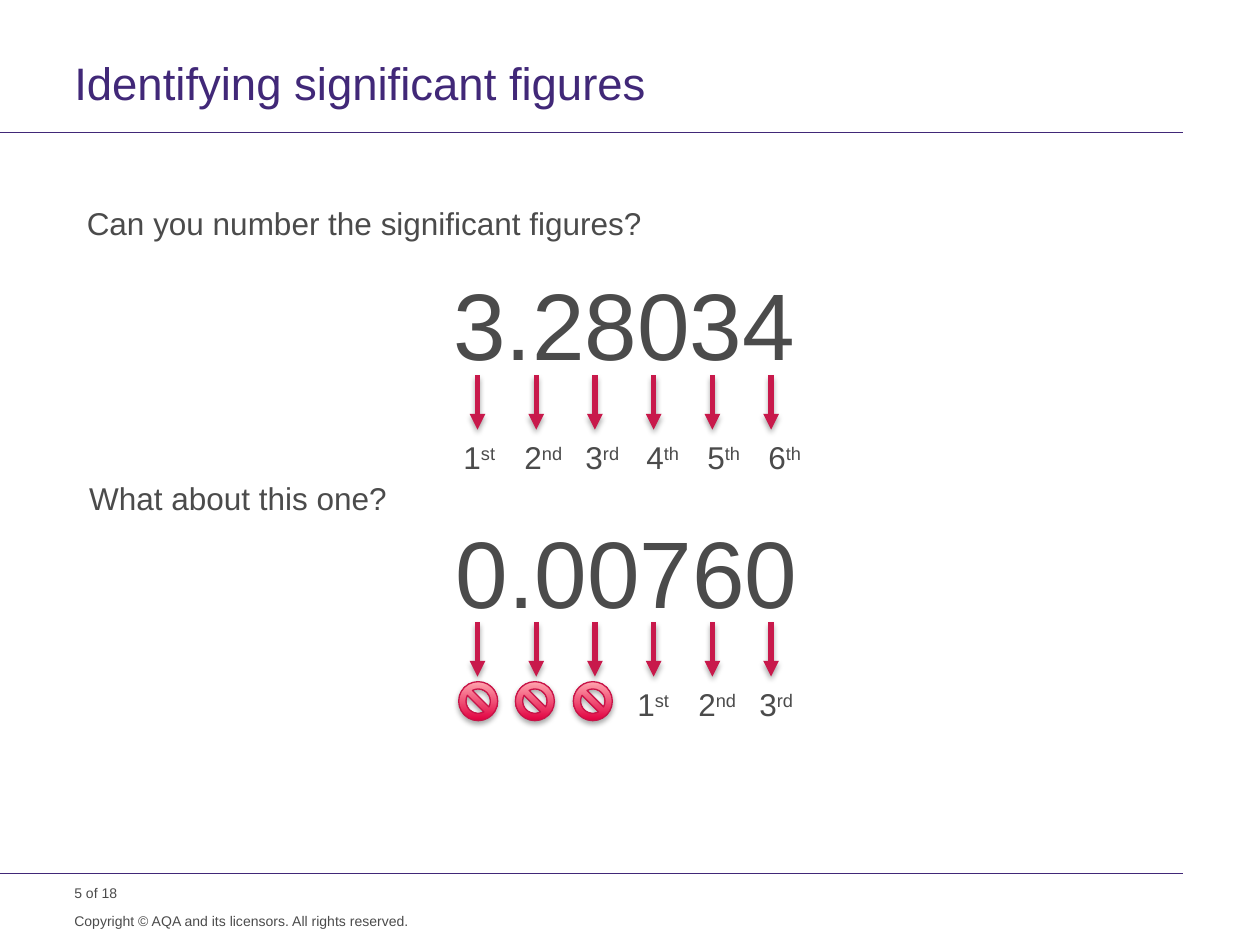
from lxml import etree
from pptx import Presentation
from pptx import util as u
from pptx.dml.color import RGBColor
from pptx.enum import shapes, text
from pptx.oxml import ns

PURPLE = RGBColor(0x41, 0x28, 0x78)
GREY = RGBColor(0x4B, 0x4B, 0x4B)
CRIMSON = RGBColor(0xC8, 0x19, 0x4B)
SIGN_EDGE = RGBColor(0xC8, 0x14, 0x48)
SIGN_DARK = RGBColor(0xE1, 0x00, 0x40)
SIGN_LIGHT = RGBColor(0xFF, 0xA4, 0xAE)

SHADOW = (
    f'<a:effectLst {ns.nsdecls("a")}>'
    '<a:outerShdw blurRad="40000" dist="23000" dir="5400000" rotWithShape="0">'
    '<a:srgbClr val="000000"><a:alpha val="35000"/></a:srgbClr>'
    '</a:outerShdw></a:effectLst>'
)

deck = Presentation()
deck.slide_width, deck.slide_height = u.Inches(10), u.Inches(7.5)
page = deck.slides.add_slide(deck.slide_layouts[6])


def add_text(place, words, size, color=GREY, suffix="", margins=None, spacing=None):
    """Add a one-line box; suffix is set as superscript after the words."""
    box = page.shapes.add_textbox(*map(u.Inches, place))
    frame = box.text_frame
    frame.word_wrap = True
    frame.vertical_anchor = text.MSO_ANCHOR.TOP
    if margins:
        (frame.margin_left, frame.margin_top,
         frame.margin_right, frame.margin_bottom) = map(u.Inches, margins)
    para = frame.paragraphs[0]
    if spacing:
        para.line_spacing = u.Pt(spacing)
    for part in filter(None, (words, suffix)):
        span = para.add_run()
        span.text = part
        span.font.name = "Arial"
        span.font.size = u.Pt(size)
        span.font.color.rgb = color
    if suffix:
        span.font._element.set("baseline", "30000")


def add_line(start, end, color, width):
    line = page.shapes.add_connector(
        shapes.MSO_CONNECTOR.STRAIGHT, *map(u.Inches, (*start, *end)))
    line.line.color.rgb = color
    line.line.width = u.Pt(width)
    return line


# Title, rules and footer
for rule_y in (1.05, 6.93):
    rule = add_line((0, rule_y), (9.39, rule_y), PURPLE, 0.6)
    etree.SubElement(rule._element.spPr, ns.qn("a:effectLst"))
add_text((0.59, 0.48, 8.8, 0.47), "Identifying significant figures", 26, PURPLE,
         margins=(0, 0, 0.1, 0), spacing=28)
add_text((0.59, 7.02, 1.57, 0.13), "5 of 18", 8, margins=(0, 0, 0, 0))
add_text((0.59, 7.24, 2.93, 0.26),
         "Copyright © AQA and its licensors. All rights reserved.", 8,
         margins=(0, 0, 0, 0), spacing=10)

# Questions and numbers
add_text((0.59, 1.57, 5.41, 0.4), "Can you number the significant figures?", 18)
add_text((0.61, 3.75, 4.74, 0.4), "What about this one?", 18)
add_text((3.5, 2.06, 3.22, 1.01), "3.28034", 54)
add_text((3.52, 4.03, 3, 1.01), "0.00760", 54)

# One arrow under each number position
for arrow_top in (2.98, 4.94):
    for column in range(6):
        x = 3.79 + 0.466 * column
        arrow = add_line((x, arrow_top), (x, arrow_top + 0.43), CRIMSON, 3)
        etree.SubElement(arrow.line._get_or_add_ln(), ns.qn("a:tailEnd"), type="triangle")
        arrow._element.spPr.append(etree.fromstring(SHADOW))

# Ordinals of the significant figures
ordinal_rows = [
    (3.58, 3.43, ["st", "nd", "rd", "th", "th", "th"]),
    (4.96, 5.39, ["st", "nd", "rd"]),
]
for left, top, suffixes in ordinal_rows:
    for index, suffix in enumerate(suffixes):
        add_text((left + 0.484 * index, top, 0.72, 0.4), str(index + 1), 18, suffix=suffix)

# Leading zeros are not significant
for left in (3.64, 4.09, 4.55):
    sign = page.shapes.add_shape(
        shapes.MSO_SHAPE.NO_SYMBOL, *map(u.Inches, (left, 5.41, 0.31, 0.31)))
    sign.fill.gradient()
    sign.fill.gradient_angle = 90
    for stop, color in zip(sign.fill.gradient_stops, (SIGN_DARK, SIGN_LIGHT)):
        stop.color.rgb = color
    sign.line.color.rgb = SIGN_EDGE
    sign.line.width = u.Pt(0.75)
    sign._element.spPr.append(etree.fromstring(SHADOW))

deck.save("out.pptx")
